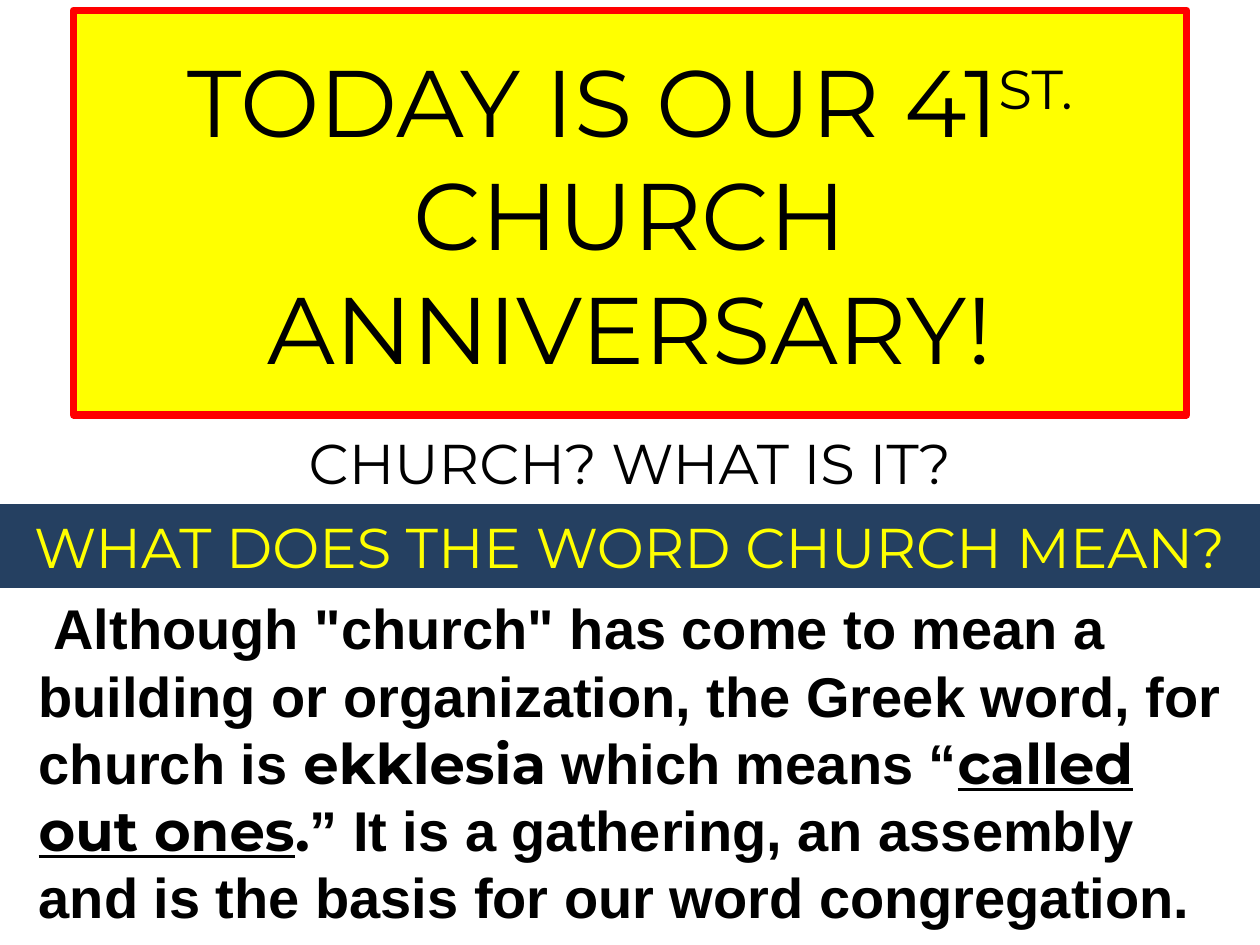
from dataclasses import dataclass
from typing import Optional

from pptx import Presentation
from pptx.dml.color import RGBColor
from pptx.enum import shapes, text
from pptx.util import Pt

COLORS = {
    "black": "000000",
    "yellow": "FFFF00",
    "red": "FF0000",
    "navy": "254061",
}
HEADING_FONT = "Montserrat"
BODY_FONT = "Arial"


@dataclass
class Span:
    text: str
    font: Optional[str] = None
    underline: bool = False
    superscript: bool = False


@dataclass
class Block:
    left: float
    top: float
    width: float
    height: float
    spans: list[Span]
    size: float = 32
    font: str = HEADING_FONT
    color: str = "black"
    fill: Optional[str] = None
    border: Optional[str] = None
    bold: bool = False
    align: text.PP_ALIGN = text.PP_ALIGN.CENTER
    anchor: text.MSO_ANCHOR = text.MSO_ANCHOR.MIDDLE
    margin_top: float = 3.6
    line_spacing: Optional[float] = None
    indent: tuple[float, float] = (0, 0)


BLOCKS = [
    Block(42, 6, 636, 231,
          [Span("TODAY IS OUR 41"), Span("ST.", superscript=True),
           Span(" CHURCH ANNIVERSARY!")],
          size=54, fill="yellow", border="red",
          anchor=text.MSO_ANCHOR.TOP, margin_top=18.5),
    Block(0, 240, 720, 48, [Span("CHURCH? WHAT IS IT?")]),
    Block(-12, 288, 744, 48, [Span("WHAT DOES THE WORD CHURCH MEAN?")],
          color="yellow", fill="navy"),
    Block(-12, 336, 720, 204,
          [Span('Although "church" has come to mean a building or '
                "organization, the Greek word, for church is "),
           Span("ekklesia", HEADING_FONT),
           Span(" which means “"),
           Span("called out ones", HEADING_FONT, underline=True),
           Span(".", HEADING_FONT),
           Span("” It is a gathering, an assembly and is the basis for "
                "our word congregation.")],
          font=BODY_FONT, bold=True, align=text.PP_ALIGN.LEFT,
          anchor=text.MSO_ANCHOR.TOP, line_spacing=38.3, indent=(27, 8.5)),
]


def rgb(name: str) -> RGBColor:
    return RGBColor.from_string(COLORS[name])


def add_box(page, block: Block):
    """Add a filled rectangle, or a text box when the block has no fill."""
    place = [Pt(v) for v in (block.left, block.top, block.width, block.height)]
    if block.fill is None:
        return page.shapes.add_textbox(*place)
    box = page.shapes.add_shape(shapes.MSO_SHAPE.RECTANGLE, *place)
    box.shadow.inherit = False
    box.fill.solid()
    box.fill.fore_color.rgb = rgb(block.fill)
    if block.border:
        box.line.color.rgb = rgb(block.border)
        box.line.width = Pt(4.5)
    else:
        box.line.fill.background()
    return box


def add_span(para, span: Span) -> None:
    run = para.add_run()
    run.text = span.text
    if span.font:
        run.font.name = span.font
    if span.underline:
        run.font.underline = True
    if span.superscript:
        run._r.get_or_add_rPr().set("baseline", "30000")


def draw_block(page, block: Block) -> None:
    frame = add_box(page, block).text_frame
    frame.word_wrap = True
    frame.vertical_anchor = block.anchor
    frame.margin_top = Pt(block.margin_top)

    para = frame.paragraphs[0]
    para.alignment = block.align
    if block.line_spacing:
        para.line_spacing = Pt(block.line_spacing)
    if any(block.indent):
        margin, first_line = block.indent
        props = para._p.get_or_add_pPr()
        props.set("marL", str(Pt(margin)))
        props.set("indent", str(Pt(first_line)))
    para.font.name = block.font
    para.font.size = Pt(block.size)
    para.font.bold = block.bold
    para.font.color.rgb = rgb(block.color)
    for span in block.spans:
        add_span(para, span)


def main() -> None:
    deck = Presentation()
    deck.slide_width, deck.slide_height = Pt(720), Pt(540)
    page = deck.slides.add_slide(deck.slide_layouts[6])
    for block in BLOCKS:
        draw_block(page, block)
    deck.save("out.pptx")


if __name__ == "__main__":
    main()
